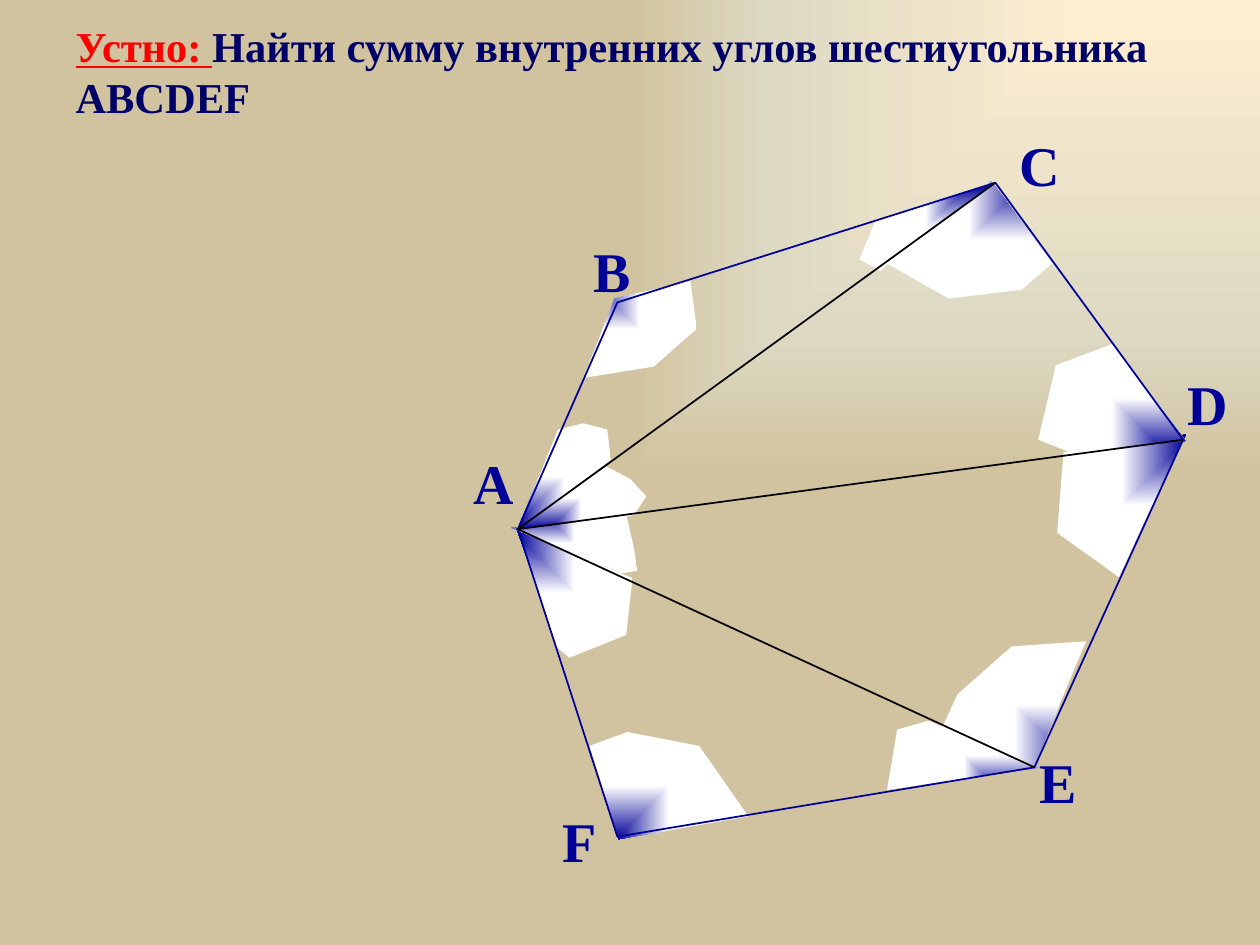
from dataclasses import dataclass

from pptx import Presentation
from pptx.dml.color import RGBColor
from pptx.enum.shapes import MSO_CONNECTOR
from pptx.enum.text import MSO_ANCHOR, MSO_AUTO_SIZE, PP_ALIGN
from pptx.oxml import parse_xml
from pptx.oxml.ns import nsdecls, qn
from pptx.util import Inches, Pt

STRAIGHT = MSO_CONNECTOR.STRAIGHT
MIDDLE = MSO_ANCHOR.MIDDLE
LEFT = PP_ALIGN.LEFT
NO_FIT, GROW = MSO_AUTO_SIZE.NONE, MSO_AUTO_SIZE.SHAPE_TO_FIT_TEXT


@dataclass(frozen=True)
class Theme:
    font: str = "Times New Roman"
    title_size: float = 24.3
    label_size: float = 32
    line_width: float = 1
    accent: str = "FF0000"
    title: str = "000066"
    outline: str = "000099"
    diagonal: str = "000000"
    sector: tuple = ((0, "000099"), (100, "FFFFFF"))
    background: tuple = ((0, "FFEFD1"), (70, "DDD9C3"), (100, "D1C39F"))


# Gradient centres, as percent across and down
TOP_LEFT, TOP_RIGHT, BOTTOM_LEFT, BOTTOM_RIGHT = (0, 0), (100, 0), (0, 100), (100, 100)

HEXAGON = {"A": (4.11, 4.2), "B": (4.9, 2.4), "C": (7.9, 1.45),
           "D": (9.39, 3.49), "E": (8.21, 6.09), "F": (4.9, 6.64)}

# Letter, left, top and width of each vertex label
LABELS = [("А", 3.66, 3.51, 0.52), ("В", 4.61, 1.83, 0.5), ("С", 7.99, 0.99, 0.52),
          ("D", 9.33, 2.88, 0.52), ("E", 8.15, 5.88, 0.5), ("F", 4.37, 6.35, 0.47)]

# Angle sectors of each triangle: gradient centre and outline, from the vertex
TRIANGLES = {
    "AEF": [
        (BOTTOM_RIGHT, [(8.26, 6.09), (7.04, 6.27), (7.09, 5.97), (7.12, 5.79), (7.37, 5.72)]),
        (BOTTOM_LEFT, [(4.91, 6.66), (4.68, 5.92), (4.98, 5.81), (5.55, 5.92), (5.94, 6.48)]),
        (TOP_LEFT, [(4.1, 4.19), (5.02, 4.59), (4.97, 5.04), (4.52, 5.22), (4.42, 5.14)]),
    ],
    "ADE": [
        (TOP_LEFT, [(4.06, 4.19), (4.97, 4.08), (5.03, 4.34), (5.06, 4.53), (4.94, 4.55)]),
        (BOTTOM_RIGHT, [(8.2, 6.09), (7.48, 5.77), (7.6, 5.51), (8.03, 5.13), (8.62, 5.09)]),
        (TOP_RIGHT, [(9.41, 3.45), (9.06, 4.19), (8.88, 4.58), (8.39, 4.23), (8.44, 3.59)]),
    ],
    "ACD": [
        (TOP_RIGHT, [(7.87, 1.44), (8.35, 2.09), (8.11, 2.3), (7.53, 2.37), (7.02, 2.08)]),
        (BOTTOM_RIGHT, [(9.41, 3.5), (8.49, 3.59), (8.24, 3.49), (8.38, 2.9), (8.83, 2.73)]),
        (BOTTOM_LEFT, [(4.1, 4.2), (4.81, 3.7), (5, 3.8), (5.13, 3.94), (5.03, 4.09)]),
    ],
    "ABC": [
        (TOP_RIGHT, [(7.87, 1.47), (7.2, 1.95), (6.99, 2.15), (6.82, 2.06), (6.95, 1.75)]),
        (TOP_LEFT, [(4.88, 2.37), (5.48, 2.23), (5.53, 2.61), (5.19, 2.91), (4.63, 3)]),
        (BOTTOM_LEFT, [(4.11, 4.2), (4.43, 3.41), (4.63, 3.36), (4.82, 3.41), (4.85, 3.65)]),
    ],
}


def add_text(paragraph, text, *, font, size, color, bold=True, underline=False):
    run = paragraph.add_run()
    run.text = text
    run.font.name, run.font.size = font, Pt(size)
    run.font.bold, run.font.underline = bold, underline
    run.font.color.rgb = RGBColor.from_string(color)


def set_gradient(fill, owner, stops, centre):
    """Give owner a rectangular gradient that spreads from centre."""
    fill.solid()
    fill.fore_color.rgb = RGBColor.from_string(stops[0][1])
    across, down = centre
    stop_xml = "".join(f'<a:gs pos="{pos * 1000}"><a:srgbClr val="{color}"/></a:gs>'
                       for pos, color in stops)
    gradient = parse_xml(
        f'<a:gradFill {nsdecls("a")} rotWithShape="1"><a:gsLst>{stop_xml}</a:gsLst>'
        f'<a:path path="rect"><a:fillToRect l="{across * 1000}" t="{down * 1000}" '
        f'r="{(100 - across) * 1000}" b="{(100 - down) * 1000}"/></a:path></a:gradFill>')
    solid = owner.find(".//" + qn("a:solidFill"))
    solid.getparent().replace(solid, gradient)


class SlideBuilder:
    def __init__(self, slide, theme):
        self.slide, self.theme = slide, theme

    def background(self):
        set_gradient(self.slide.background.fill, self.slide.element,
                     self.theme.background, TOP_RIGHT)

    def title(self, lead, task):
        title = self.slide.shapes.title
        title.left, title.top = Inches(0.5), Inches(0.3)
        title.width, title.height = Inches(9), Inches(1.14)
        frame = title.text_frame
        frame.auto_size, frame.word_wrap = NO_FIT, True
        frame.vertical_anchor = MIDDLE
        frame.margin_bottom = Inches(0.67)
        paragraph = frame.paragraphs[0]
        paragraph.alignment = LEFT
        style = {"font": self.theme.font, "size": self.theme.title_size}
        add_text(paragraph, lead, color=self.theme.accent, underline=True, **style)
        add_text(paragraph, task, color=self.theme.title, **style)

    def group(self):
        return self.slide.shapes.add_group_shape().shapes

    def polygon(self, shapes, points):
        start, *rest = [(Inches(x), Inches(y)) for x, y in points]
        builder = shapes.build_freeform(*start)
        builder.add_line_segments(rest, close=True)
        polygon = builder.convert_to_shape()
        polygon.shadow.inherit = False
        return polygon

    def sector(self, shapes, centre, points):
        sector = self.polygon(shapes, points)
        sector.line.fill.background()
        set_gradient(sector.fill, sector.element, self.theme.sector, centre)

    def outline(self, points):
        outline = self.polygon(self.slide.shapes, points)
        outline.fill.background()
        self.stroke(outline.line, self.theme.outline)

    def diagonal(self, shapes, start, end):
        ends = [Inches(value) for value in (*start, *end)]
        diagonal = shapes.add_connector(STRAIGHT, *ends)
        self.stroke(diagonal.line, self.theme.diagonal)
        diagonal.element.spPr.append(parse_xml(f'<a:effectLst {nsdecls("a")}/>'))

    def stroke(self, line, color):
        line.color.rgb = RGBColor.from_string(color)
        line.width = Pt(self.theme.line_width)

    def label(self, letter, left, top, width):
        box = self.slide.shapes.add_textbox(
            Inches(left), Inches(top), Inches(width), Inches(0.63))
        box.text_frame.word_wrap, box.text_frame.auto_size = False, GROW
        add_text(box.text_frame.paragraphs[0], letter, font=self.theme.font,
                 size=self.theme.label_size, color=self.theme.outline)


def main():
    deck = Presentation()
    deck.slide_width, deck.slide_height = Inches(10), Inches(7.5)
    title_only = deck.slide_layouts[5]
    builder = SlideBuilder(deck.slides.add_slide(title_only), Theme())

    builder.background()
    builder.title("Устно: ", "Найти сумму внутренних углов шестиугольника ABCDEF")

    # Angles, triangle by triangle
    for sectors in TRIANGLES.values():
        triangle = builder.group()
        for centre, points in sectors:
            builder.sector(triangle, centre, points)

    # Hexagon and its diagonals from A
    builder.outline(HEXAGON.values())
    diagonals = builder.group()
    for vertex in "CDE":
        builder.diagonal(diagonals, HEXAGON["A"], HEXAGON[vertex])

    # Vertex names
    for label in LABELS:
        builder.label(*label)

    deck.save("out.pptx")


if __name__ == "__main__":
    main()
